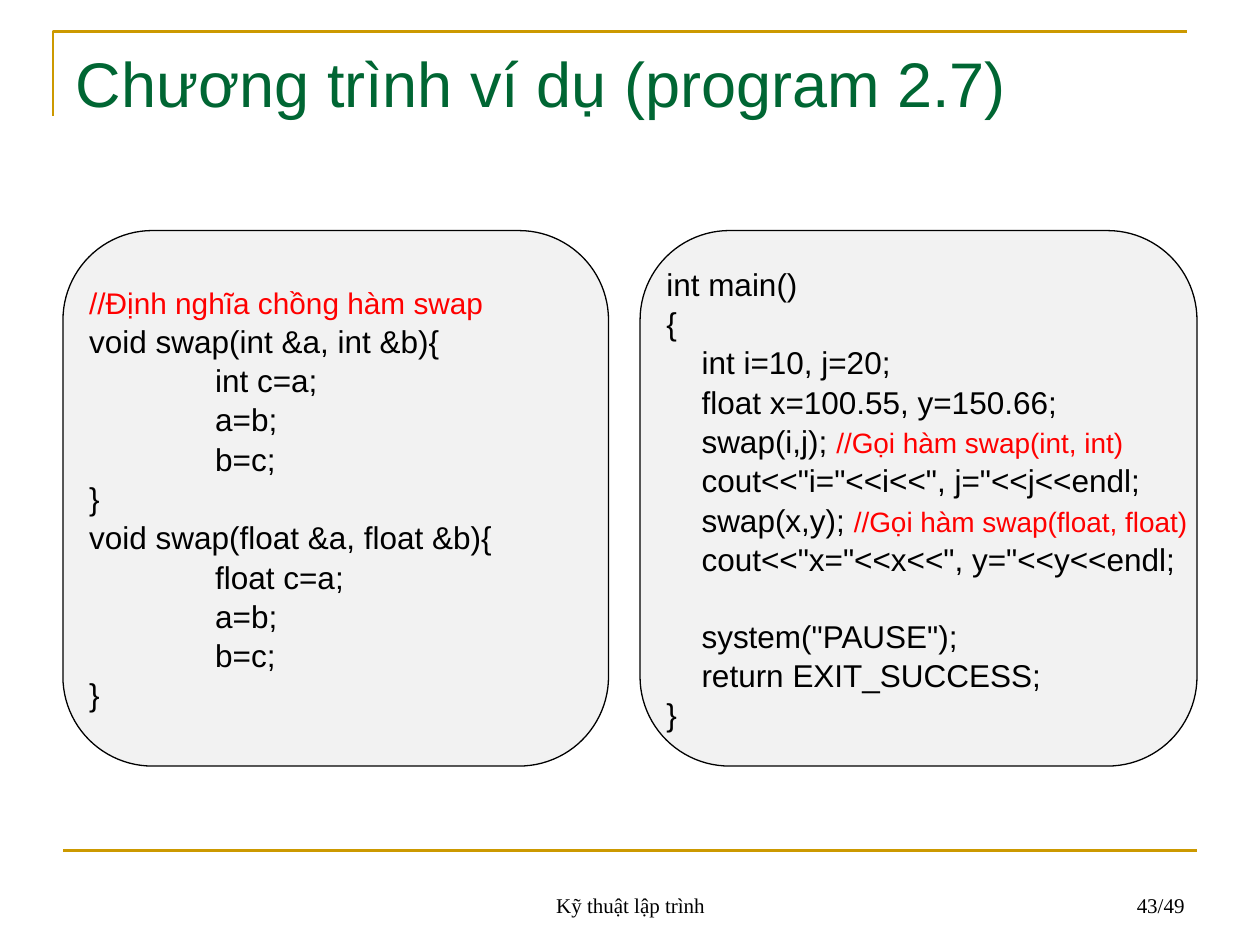
from lxml import etree
from pptx import Presentation
from pptx import util as u
from pptx.dml.color import RGBColor
from pptx.enum import shapes, text
from pptx.oxml.ns import qn

GOLD, GREEN, RED, BLACK, PANEL = "CC9900", "006633", "FF0000", "000000", "F2F2F2"

OVERLOADS = [
    (0, [("//Định nghĩa chồng hàm swap", RED, 17)]),
    (0, [("void swap(int &a, int &b){", BLACK, 18)]),
    (1, [("int c=a;", BLACK, 18)]),
    (1, [("a=b;", BLACK, 18)]),
    (1, [("b=c;", BLACK, 18)]),
    (0, [("}", BLACK, 18)]),
    (0, [("void swap(float &a, float &b){", BLACK, 18)]),
    (1, [("float c=a;", BLACK, 18)]),
    (1, [("a=b;", BLACK, 18)]),
    (1, [("b=c;", BLACK, 18)]),
    (0, [("}", BLACK, 18)]),
]
MAIN = [
    (0, [("int main()", BLACK, 18)]),
    (0, [("{", BLACK, 18)]),
    (1, [("int i=10, j=20;", BLACK, 18)]),
    (1, [("float x=100.55, y=150.66;", BLACK, 18)]),
    (1, [("swap(i,j); ", BLACK, 18), ("//Gọi hàm swap(int, int)", RED, 16)]),
    (1, [('cout<<"i="<<i<<", j="<<j<<endl;', BLACK, 18)]),
    (1, [("swap(x,y); ", BLACK, 18), ("//Gọi hàm swap(float, float)", RED, 16)]),
    (1, [('cout<<"x="<<x<<", y="<<y<<endl;', BLACK, 18)]),
    (1, [('system("PAUSE");', BLACK, 18)]),
    (1, [("return EXIT_SUCCESS;", BLACK, 18)]),
    (0, [("}", BLACK, 18)]),
]


def color(value):
    return RGBColor.from_string(value)


def add_text(para, words, size=18, font="Arial", fill=BLACK):
    span = para.add_run()
    span.text = words
    span.font.size = u.Pt(size)
    span.font.name = font
    span.font.color.rgb = color(fill)


class Slide:
    def __init__(self, deck):
        self.page = deck.slides.add_slide(deck.slide_layouts[5])

    def place(self, box, left, top, width, height):
        box.left, box.top = u.Inches(left), u.Inches(top)
        box.width, box.height = u.Inches(width), u.Inches(height)

    def stroke(self, line, value, width):
        line.color.rgb = color(value)
        line.width = u.Pt(width)

    def title(self, words):
        box = self.page.shapes.title
        self.place(box, 0.5, 0.3, 9, 1.25)
        frame = box.text_frame
        frame.vertical_anchor = text.MSO_ANCHOR.TOP
        frame.auto_size = text.MSO_AUTO_SIZE.NONE
        para = frame.paragraphs[0]
        para.alignment = text.PP_ALIGN.LEFT
        add_text(para, words, size=36, fill=GREEN)

    def corner(self, left, top, right, bottom):
        builder = self.page.shapes.build_freeform(u.Inches(left), u.Inches(bottom))
        points = [(left, top), (right, top)]
        builder.add_line_segments([(u.Inches(x), u.Inches(y)) for x, y in points], close=False)
        shape = builder.convert_to_shape()
        shape.shadow.inherit = False
        shape.fill.background()
        self.stroke(shape.line, GOLD, 1.5)

    def rule(self, left, right, top):
        line = self.page.shapes.add_connector(
            shapes.MSO_CONNECTOR.STRAIGHT,
            u.Inches(left), u.Inches(top), u.Inches(right), u.Inches(top))
        etree.SubElement(line._element.spPr, qn("a:effectLst"))
        self.stroke(line.line, GOLD, 1.5)

    def footer(self, words, left, width, align):
        box = self.page.shapes.add_textbox(0, 0, 0, 0)
        self.place(box, left, 6.83, width, 0.5)
        frame = box.text_frame
        frame.word_wrap = True
        frame.vertical_anchor = text.MSO_ANCHOR.BOTTOM
        para = frame.paragraphs[0]
        para.alignment = align
        add_text(para, words, size=12, font="Times New Roman")

    def code(self, lines, left, width, indent, gap_before=None):
        box = self.page.shapes.add_shape(shapes.MSO_SHAPE.ROUNDED_RECTANGLE, 0, 0, 0, 0)
        self.place(box, left, 1.83, width, 4.25)
        box.adjustments[0] = 0.167
        box.shadow.inherit = False
        box.fill.solid()
        box.fill.fore_color.rgb = color(PANEL)
        self.stroke(box.line, BLACK, 0.75)
        frame = box.text_frame
        frame.word_wrap = False
        frame.vertical_anchor = text.MSO_ANCHOR.MIDDLE
        frame.margin_left = frame.margin_right = 0
        for number, (level, spans) in enumerate(lines):
            para = frame.add_paragraph() if number else frame.paragraphs[0]
            para.alignment = text.PP_ALIGN.LEFT
            para.line_spacing = 1.04
            para._p.get_or_add_pPr().set("marL", str(u.Inches(indent * level)))
            if number == gap_before:
                para.space_before = u.Pt(21.6)
            for words, fill, size in spans:
                add_text(para, words, size=size, fill=fill)


def main():
    deck = Presentation()
    deck.slide_width, deck.slide_height = u.Inches(10), u.Inches(7.5)
    slide = Slide(deck)
    slide.corner(0.42, 0.25, 9.42, 0.92)
    slide.rule(0.5, 9.5, 6.75)
    slide.footer("Kỹ thuật lập trình", 3.42, 3.17, text.PP_ALIGN.CENTER)
    slide.footer("43/49", 7.17, 2.33, text.PP_ALIGN.RIGHT)
    slide.title("Chương trình ví dụ (program 2.7)")
    slide.code(OVERLOADS, 0.5, 4.33, indent=1)
    slide.code(MAIN, 5.08, 4.42, indent=0.28, gap_before=8)
    deck.save("out.pptx")


if __name__ == "__main__":
    main()
